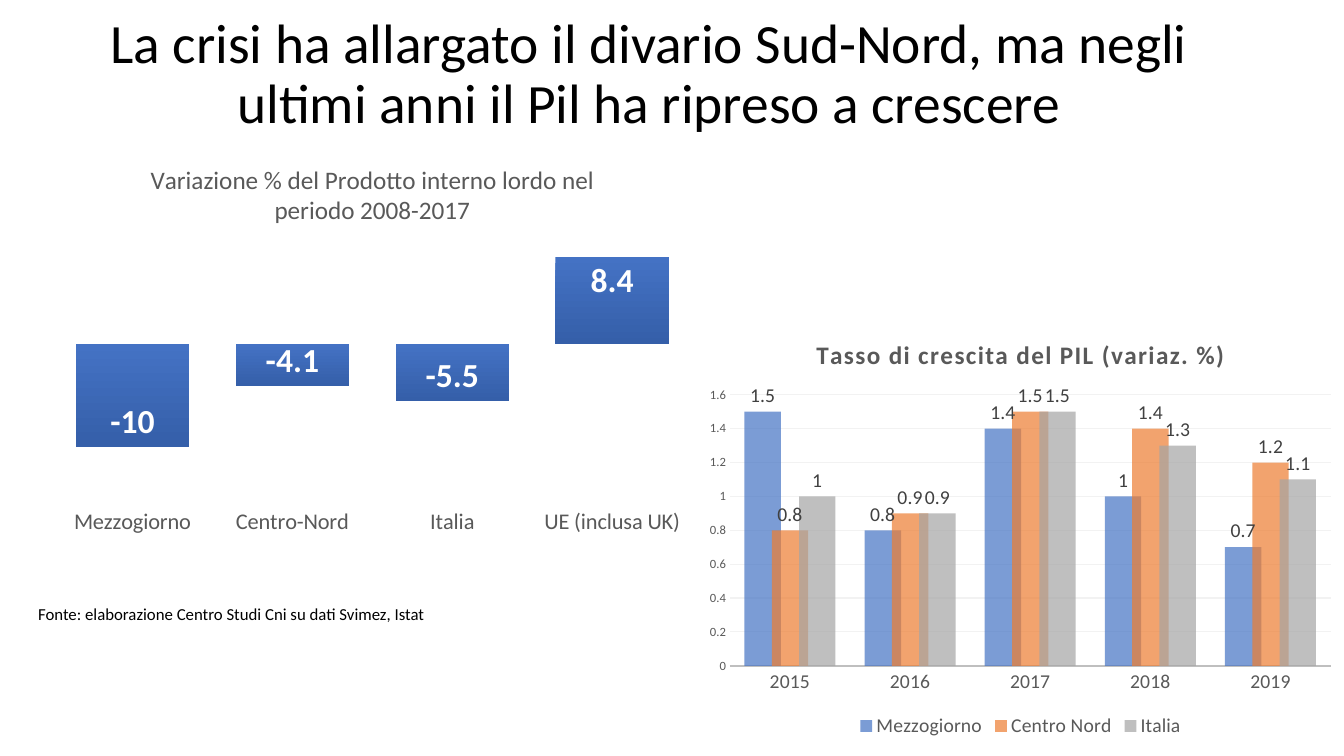
import pptx
import pptx.chart.data
import pptx.dml.color
import pptx.enum.chart
import pptx.enum.text
import pptx.oxml
import pptx.oxml.ns
import pptx.util

Cm = pptx.util.Cm
Pt = pptx.util.Pt
RGBColor = pptx.dml.color.RGBColor
qn = pptx.oxml.ns.qn

FONT = "Calibri"
BLACK = RGBColor(0x00, 0x00, 0x00)
WHITE = RGBColor(0xFF, 0xFF, 0xFF)
GREY = RGBColor(0x59, 0x59, 0x59)
DARK_GREY = RGBColor(0x40, 0x40, 0x40)
AXIS_GREY = RGBColor(0xBF, 0xBF, 0xBF)
GRID_GREY = RGBColor(0xF2, 0xF2, 0xF2)
BLUE = RGBColor(0x44, 0x72, 0xC4)
DEEP_BLUE = RGBColor(0x35, 0x5F, 0xA9)
ORANGE = RGBColor(0xED, 0x7D, 0x31)
SILVER = RGBColor(0xA5, 0xA5, 0xA5)


def style_font(font, size, color, bold=False):
    font.name = FONT
    font.size = Pt(size)
    font.bold = bold
    font.color.rgb = color


def place_plot(chart, x, y, w, h):
    plot_area = chart._chartSpace.chart.plotArea
    for layout in plot_area.findall(qn("c:layout")):
        plot_area.remove(layout)
    values = "".join(f'<c:{tag} val="{value}"/>' for tag, value in zip("xywh", (x, y, w, h)))
    plot_area.insert(0, pptx.oxml.parse_xml(
        f'<c:layout {pptx.oxml.ns.nsdecls("c")}><c:manualLayout>'
        '<c:layoutTarget val="inner"/><c:xMode val="edge"/><c:yMode val="edge"/>'
        f'{values}</c:manualLayout></c:layout>'))


def add_columns(slide, box, title, years_or_areas, series, gap):
    data = pptx.chart.data.CategoryChartData()
    data.categories = years_or_areas
    for name, values in series:
        data.add_series(name, values)
    chart = slide.shapes.add_chart(
        pptx.enum.chart.XL_CHART_TYPE.COLUMN_CLUSTERED, *box, data).chart
    style_font(chart.font, 10, BLACK)
    chart.has_title = True
    chart.chart_title.text_frame.text = title
    chart.has_legend = False
    chart.plots[0].gap_width = gap
    chart.plots[0].vary_by_categories = False
    for axis in (chart.category_axis, chart.value_axis):
        axis.major_tick_mark = pptx.enum.chart.XL_TICK_MARK.NONE
        axis.minor_tick_mark = pptx.enum.chart.XL_TICK_MARK.NONE
        axis.format.line.fill.background()
    for columns in chart.plots[0].series:
        columns.invert_if_negative = False
    return chart


def label_columns(columns, position, size, color, bold=False):
    labels = columns.data_labels
    labels.show_value = True
    labels.position = position
    style_font(labels.font, size, color, bold)


def add_gdp_change(slide, left, top, width, height):
    chart = add_columns(
        slide, (left, top, width, height),
        "Variazione % del Prodotto interno lordo nel periodo 2008-2017",
        ["Mezzogiorno", "Centro-Nord", "Italia", "UE (inclusa UK)"],
        [("Series 1", (-10, -4.1, -5.5, 8.4))], 41)
    style_font(chart.chart_title.text_frame.paragraphs[0].runs[0].font, 18, GREY)
    place_plot(chart, 0.02, 0.24, 0.96, 0.64)
    areas = chart.category_axis
    areas.tick_label_position = pptx.enum.chart.XL_TICK_LABEL_POSITION.LOW
    style_font(areas.tick_labels.font, 16, GREY)
    change = chart.value_axis
    change.minimum_scale, change.maximum_scale = -15, 10
    change.has_major_gridlines = False
    change.visible = False
    columns = chart.plots[0].series[0]
    fill = columns.format.fill
    fill.gradient()
    fill.gradient_angle = 270
    for stop, color, position in zip(fill.gradient_stops, (BLUE, DEEP_BLUE), (0, 1)):
        stop.color.rgb = color
        stop.position = position
    label_columns(columns, pptx.enum.chart.XL_LABEL_POSITION.INSIDE_END, 24, WHITE, True)


def add_growth_rate(slide, left, top, width, height):
    chart = add_columns(
        slide, (left, top, width, height),
        "Tasso di crescita del PIL (variaz. %)",
        ["2015", "2016", "2017", "2018", "2019"],
        [("Mezzogiorno", (1.5, 0.8, 1.4, 1, 0.7)),
         ("Centro Nord", (0.8, 0.9, 1.5, 1.4, 1.2)),
         ("Italia", (1, 0.9, 1.5, 1.3, 1.1))], 80)
    heading = chart.chart_title.text_frame.paragraphs[0].runs[0]
    style_font(heading.font, 18, GREY, True)
    heading.font._element.set("spc", "100")
    place_plot(chart, 0.05, 0.18, 0.93, 0.64)
    chart.plots[0].overlap = 25
    years = chart.category_axis
    style_font(years.tick_labels.font, 14, GREY)
    years.format.line.color.rgb = AXIS_GREY
    years.format.line.width = Pt(1.25)
    rate = chart.value_axis
    rate.minimum_scale, rate.maximum_scale, rate.major_unit = 0, 1.6, 0.2
    style_font(rate.tick_labels.font, 9, GREY)
    rate.major_gridlines.format.line.color.rgb = GRID_GREY
    rate.major_gridlines.format.line.width = Pt(0.75)
    chart.has_legend = True
    chart.legend.position = pptx.enum.chart.XL_LEGEND_POSITION.BOTTOM
    chart.legend.include_in_layout = False
    style_font(chart.legend.font, 14, GREY)
    for columns, color in zip(chart.plots[0].series, (BLUE, ORANGE, SILVER)):
        columns.format.fill.solid()
        columns.format.fill.fore_color.rgb = color
        tint = next(columns._element.iter(qn("a:srgbClr")))
        tint.append(pptx.oxml.parse_xml(
            f'<a:alpha {pptx.oxml.ns.nsdecls("a")} val="70000"/>'))
        label_columns(columns, pptx.enum.chart.XL_LABEL_POSITION.OUTSIDE_END, 14, DARK_GREY)


def add_headline(slide, left, top, width, height):
    headline = slide.shapes.title
    headline.left, headline.top, headline.width, headline.height = left, top, width, height
    frame = headline.text_frame
    frame.text = ("La crisi ha allargato il divario Sud-Nord, "
                  "ma negli ultimi anni il Pil ha ripreso a crescere")
    frame.word_wrap = True
    frame.auto_size = pptx.enum.text.MSO_AUTO_SIZE.NONE
    frame.vertical_anchor = pptx.enum.text.MSO_ANCHOR.MIDDLE
    paragraph = frame.paragraphs[0]
    paragraph.alignment = pptx.enum.text.PP_ALIGN.CENTER
    paragraph.line_spacing = 0.9
    style_font(paragraph.runs[0].font, 39.6, BLACK)


def add_source_note(slide, left, top, width, height):
    frame = slide.shapes.add_textbox(left, top, width, height).text_frame
    frame.word_wrap = True
    frame.auto_size = pptx.enum.text.MSO_AUTO_SIZE.SHAPE_TO_FIT_TEXT
    frame.text = "Fonte: elaborazione Centro Studi Cni su dati Svimez, Istat"
    style_font(frame.paragraphs[0].runs[0].font, 12, BLACK)


def main():
    deck = pptx.Presentation()
    deck.slide_width, deck.slide_height = Cm(33.87), Cm(19.05)
    slide = deck.slides.add_slide(deck.slide_layouts[5])
    add_headline(slide, Cm(1.47), Cm(0.18), Cm(29.77), Cm(3.45))
    add_gdp_change(slide, Cm(0.99), Cm(3.63), Cm(16.79), Cm(10.16))
    add_growth_rate(slide, Cm(17.58), Cm(8.03), Cm(16.28), Cm(10.67))
    add_source_note(slide, Cm(0.71), Cm(15.09), Cm(15.37), Cm(0.77))
    deck.save("out.pptx")


if __name__ == "__main__":
    main()
